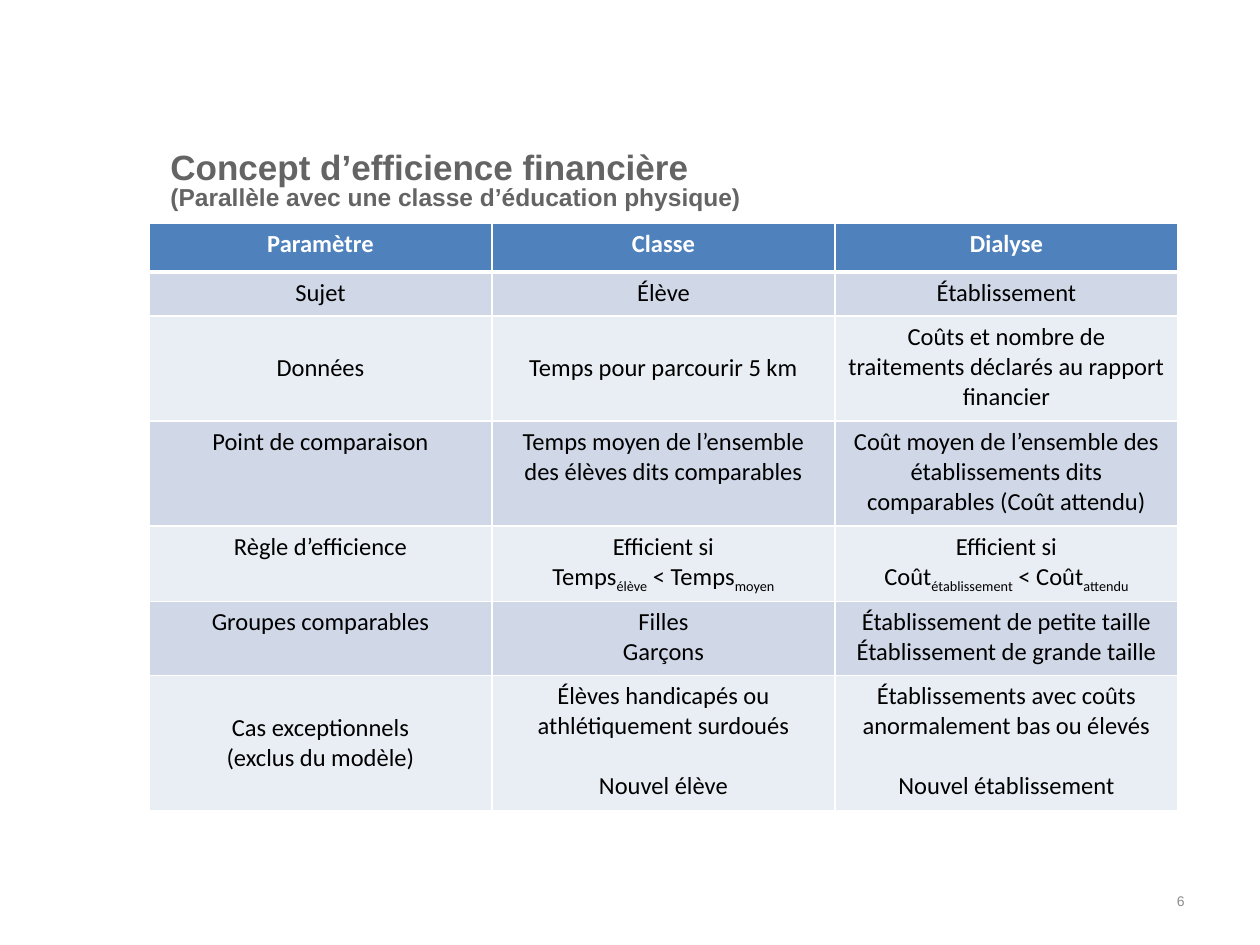
"""Builds a slide comparing financial efficiency with a physical education class."""
from lxml import etree
from pptx import Presentation
from pptx import util as u
from pptx.dml.color import RGBColor
from pptx.enum import text
from pptx.oxml.ns import qn

PX = 914400 // 126


def add_span(para, words, size, font, color, bold=False):
    span = para.add_run()
    span.text = words
    span.font.size = u.Pt(size)
    span.font.name = font
    span.font.bold = bold
    span.font.color.rgb = RGBColor.from_string(color)
    return span


def add_box(page, left, top, width, height):
    box = page.shapes.add_textbox(left * PX, top * PX, width * PX, height * PX)
    box.text_frame.word_wrap = True
    box.text_frame.vertical_anchor = text.MSO_ANCHOR.MIDDLE
    return box.text_frame.paragraphs[0]


deck = Presentation()
deck.slide_width, deck.slide_height = 1260 * PX, 945 * PX
page = deck.slides.add_slide(deck.slide_layouts[6])

title = add_box(page, 158, 132, 1040, 101)
title.line_spacing = 0.8
add_span(title, "Concept d’efficience financière", 20, "Arial", "646464", True)
title.add_line_break()
add_span(title, "(Parallèle avec une classe d’éducation physique)", 14, "Arial", "646464", True)

ROWS = [
    (49, "Paramètre", "Classe", "Dialyse"),
    (44, "Sujet", "Élève", "Établissement"),
    (105, "Données", "Temps pour parcourir 5 km",
     "Coûts et nombre de traitements déclarés au rapport financier"),
    (105, "Point de comparaison", "Temps moyen de l’ensemble des élèves dits comparables",
     "Coût moyen de l’ensemble des établissements dits comparables (Coût attendu)"),
    (74, "Règle d’efficience", "Efficient si\nTemps|élève| < Temps|moyen",
     "Efficient si\nCoût|établissement| < Coût|attendu"),
    (74, "Groupes comparables", "Filles\nGarçons",
     "Établissement de petite taille\nÉtablissement de grande taille"),
    (135, "Cas exceptionnels\n(exclus du modèle)",
     "Élèves handicapés ou athlétiquement surdoués\nNouvel élève",
     "Établissements avec coûts anormalement bas ou élevés\nNouvel établissement"),
]
MIDDLE_CELLS = {(2, 0), (2, 1), (6, 0)}
SPACED_CELLS = {(6, 1), (6, 2)}
BANDS = ["E9EDF4", "D0D8E8"]

table = page.shapes.add_table(len(ROWS), 3, 149 * PX, 223 * PX, 1029 * PX, 586 * PX).table
for column in table.columns:
    column.width = 343 * PX

for r, (height, *labels) in enumerate(ROWS):
    table.rows[r].height = height * PX
    for c, label in enumerate(labels):
        cell = table.cell(r, c)
        props = cell._tc.get_or_add_tcPr()
        for side in "LRTB":
            thick = (r, side) in {(0, "B"), (1, "T")}
            line = etree.SubElement(props, qn(f"a:ln{side}"), w=str(u.Pt(3 if thick else 1)))
            paint = etree.SubElement(line, qn("a:solidFill"))
            etree.SubElement(paint, qn("a:srgbClr"), val="FFFFFF")
        cell.fill.solid()
        cell.fill.fore_color.rgb = RGBColor.from_string(BANDS[r % 2] if r else "4F81BD")
        if (r, c) in MIDDLE_CELLS:
            cell.vertical_anchor = text.MSO_ANCHOR.MIDDLE
        for i, words in enumerate(label.split("\n")):
            para = cell.text_frame.add_paragraph() if i else cell.text_frame.paragraphs[0]
            para.alignment = text.PP_ALIGN.CENTER
            if i and (r, c) in SPACED_CELLS:
                para.space_before = u.Pt(17)
            for part, piece in enumerate(words.split("|")):
                span = add_span(para, piece, 14, "Calibri", "000000" if r else "FFFFFF", r == 0)
                if part % 2:
                    span._r.get_or_add_rPr().set("baseline", "-25000")

number = add_box(page, 903, 876, 294, 50)
number.alignment = text.PP_ALIGN.RIGHT
add_span(number, "6", 8, "Arial", "8C8C8C")

deck.save("out.pptx")
